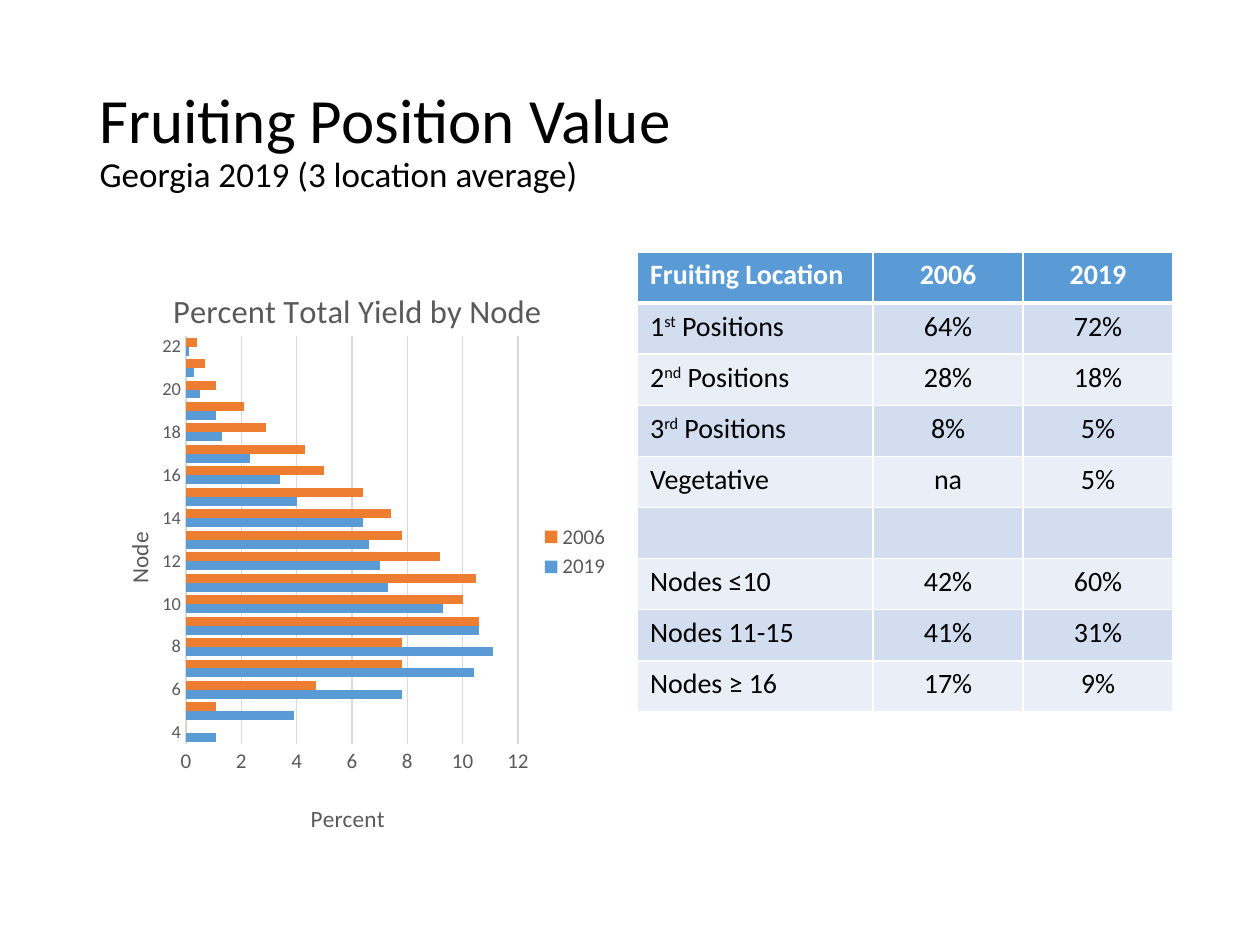
from lxml import etree
from pptx import Presentation
from pptx.chart.data import CategoryChartData
from pptx.dml.color import RGBColor
from pptx.enum import chart as charts, text
from pptx.oxml import parse_xml
from pptx.oxml.ns import nsdecls, qn
from pptx.util import Inches, Pt

FONT = "Calibri"
BLACK, WHITE, GREY, GRID = "000000", "FFFFFF", "595959", "D9D9D9"
BLUE, ORANGE = "5B9BD5", "ED7D31"
BANDS = ("D2DEEF", "EAEFF7")

YIELD_2019 = (1.1, 3.9, 7.8, 10.4, 11.1, 10.6, 9.3, 7.3, 7, 6.6,
              6.4, 4, 3.4, 2.3, 1.3, 1.1, 0.5, 0.3, 0.1)
YIELD_2006 = (0, 1.1, 4.7, 7.8, 7.8, 10.6, 10, 10.5, 9.2, 7.8,
              7.4, 6.4, 5, 4.3, 2.9, 2.1, 1.1, 0.7, 0.4)
# A location is a tuple of runs; every second run is superscript.
LOCATIONS = (
    (("Fruiting Location",), "2006", "2019"),
    (("1", "st", " Positions"), "64%", "72%"),
    (("2", "nd", " Positions"), "28%", "18%"),
    (("3", "rd", " Positions"), "8%", "5%"),
    (("Vegetative",), "na", "5%"),
    ((), "", ""),
    (("Nodes ≤10",), "42%", "60%"),
    (("Nodes 11-15",), "41%", "31%"),
    (("Nodes ≥ 16",), "17%", "9%"),
)


def rgb(value):
    return RGBColor.from_string(value)


def style(font, size, color, bold=False):
    font.name, font.size, font.bold = FONT, Pt(size), bold
    font.color.rgb = rgb(color)


def add_title(slide, left, top, width, height):
    title = slide.shapes.title
    title.left, title.top = Inches(left), Inches(top)
    title.width, title.height = Inches(width), Inches(height)
    frame = title.text_frame
    frame.text = "Fruiting Position Value\vGeorgia 2019 (3 location average)"
    frame.auto_size = text.MSO_AUTO_SIZE.NONE
    frame.vertical_anchor = text.MSO_ANCHOR.MIDDLE
    heading = frame.paragraphs[0]
    heading.alignment = text.PP_ALIGN.LEFT
    heading.line_spacing = 0.9
    for run, size in zip(heading.runs, (36, 20)):
        style(run.font, size, BLACK)


def set_layout(parent, index, **fractions):
    """Place a chart part by fractions of the chart's box."""
    for old in parent.findall(qn("c:layout")):
        parent.remove(old)
    layout = parse_xml(f"<c:layout {nsdecls('c')}><c:manualLayout/></c:layout>")
    manual = layout[0]
    if "w" in fractions:
        etree.SubElement(manual, qn("c:layoutTarget")).set("val", "inner")
    for key in ("x", "y"):
        etree.SubElement(manual, qn(f"c:{key}Mode")).set("val", "edge")
    for key, value in fractions.items():
        etree.SubElement(manual, qn(f"c:{key}")).set("val", str(value))
    parent.insert(index, layout)


def label(title, wording, size, x, y):
    """Write and place the title of a chart or an axis."""
    title.text_frame.text = wording
    style(title.text_frame.paragraphs[0].runs[0].font, size, GREY)
    set_layout(title._element, 1, x=x, y=y)


def add_yield_chart(slide, left, top, width, height):
    data = CategoryChartData()
    data.categories = [str(node) for node in range(4, 23)]
    data.add_series("2019", YIELD_2019)
    data.add_series("2006", YIELD_2006)
    chart = slide.shapes.add_chart(
        charts.XL_CHART_TYPE.BAR_CLUSTERED, Inches(left), Inches(top),
        Inches(width), Inches(height), data).chart
    style(chart.font, 10, BLACK)

    bars = chart.plots[0]
    bars.gap_width, bars.overlap, bars.vary_by_categories = 40, 0, False
    for series, color in zip(bars.series, (BLUE, ORANGE)):
        series.format.fill.solid()
        series.format.fill.fore_color.rgb = rgb(color)

    nodes, percents = chart.category_axis, chart.value_axis
    for axis, size in ((nodes, 10.5), (percents, 12)):
        axis.major_tick_mark = axis.minor_tick_mark = charts.XL_TICK_MARK.NONE
        style(axis.tick_labels.font, size, GREY)
    nodes.has_major_gridlines = False
    percents.has_major_gridlines = True
    for line in (nodes.format.line, percents.major_gridlines.format.line):
        line.color.rgb, line.width = rgb(GRID), Pt(0.75)
    percents.format.line.fill.background()
    percents.minimum_scale, percents.maximum_scale = 0, 12
    percents.major_unit = 2
    skip = parse_xml(f'<c:tickLblSkip {nsdecls("c")} val="2"/>')
    nodes._element.find(qn("c:noMultiLvlLbl")).addprevious(skip)

    chart.has_title = True
    label(chart.chart_title, "Percent Total Yield by Node", 18.6, 0.15, 0.05)
    label(nodes.axis_title, "Node", 13.3, 0.06, 0.46)
    label(percents.axis_title, "Percent", 13.3, 0.41, 0.91)
    direction = nodes.axis_title.text_frame._txBody.bodyPr
    direction.set("rot", "-5400000")
    direction.set("vert", "horz")
    set_layout(bars._element.getparent(), 0, x=0.185, y=0.14, w=0.62, h=0.68)

    chart.has_legend = True
    chart.legend.position = charts.XL_LEGEND_POSITION.RIGHT
    chart.legend.include_in_layout = False
    style(chart.legend.font, 12, GREY)


def set_borders(cell, bottom):
    for index, side in enumerate("LRTB"):
        width = Pt(bottom if side == "B" else 1)
        cell._tc.get_or_add_tcPr().insert(index, parse_xml(
            f'<a:ln{side} {nsdecls("a")} w="{width}"><a:solidFill>'
            f'<a:srgbClr val="{WHITE}"/></a:solidFill></a:ln{side}>'))


def fill_cell(cell, parts, row, centred):
    header = row == 0
    cell.fill.solid()
    cell.fill.fore_color.rgb = rgb(BLUE if header else BANDS[(row - 1) % 2])
    set_borders(cell, 3 if header else 1)
    paragraph = cell.text_frame.paragraphs[0]
    if centred:
        paragraph.alignment = text.PP_ALIGN.CENTER
    for index, part in enumerate(parts):
        run = paragraph.add_run()
        run.text = part
        style(run.font, 16, WHITE if header else BLACK, header)
        if index % 2:
            run.font._element.set("baseline", "30000")


def add_location_table(slide, left, top, width, height):
    table = slide.shapes.add_table(
        len(LOCATIONS), 3, Inches(left), Inches(top),
        Inches(width), Inches(height)).table
    for column, share in zip(table.columns, (0.44, 0.28, 0.28)):
        column.width = Inches(width * share)
    for row, (location, *shares) in enumerate(LOCATIONS):
        fill_cell(table.cell(row, 0), location, row, False)
        for column, share in enumerate(shares, 1):
            fill_cell(table.cell(row, column), (share,) if share else (), row, True)


def main():
    deck = Presentation()
    deck.slide_width, deck.slide_height = Inches(10), Inches(7.5)
    slide = deck.slides.add_slide(deck.slide_layouts[5])
    add_title(slide, 0.69, 0.4, 8.62, 1.45)
    add_yield_chart(slide, 0.69, 2, 4.25, 4.76)
    add_location_table(slide, 5.06, 2, 4.25, 3.65)
    deck.save("out.pptx")


if __name__ == "__main__":
    main()
